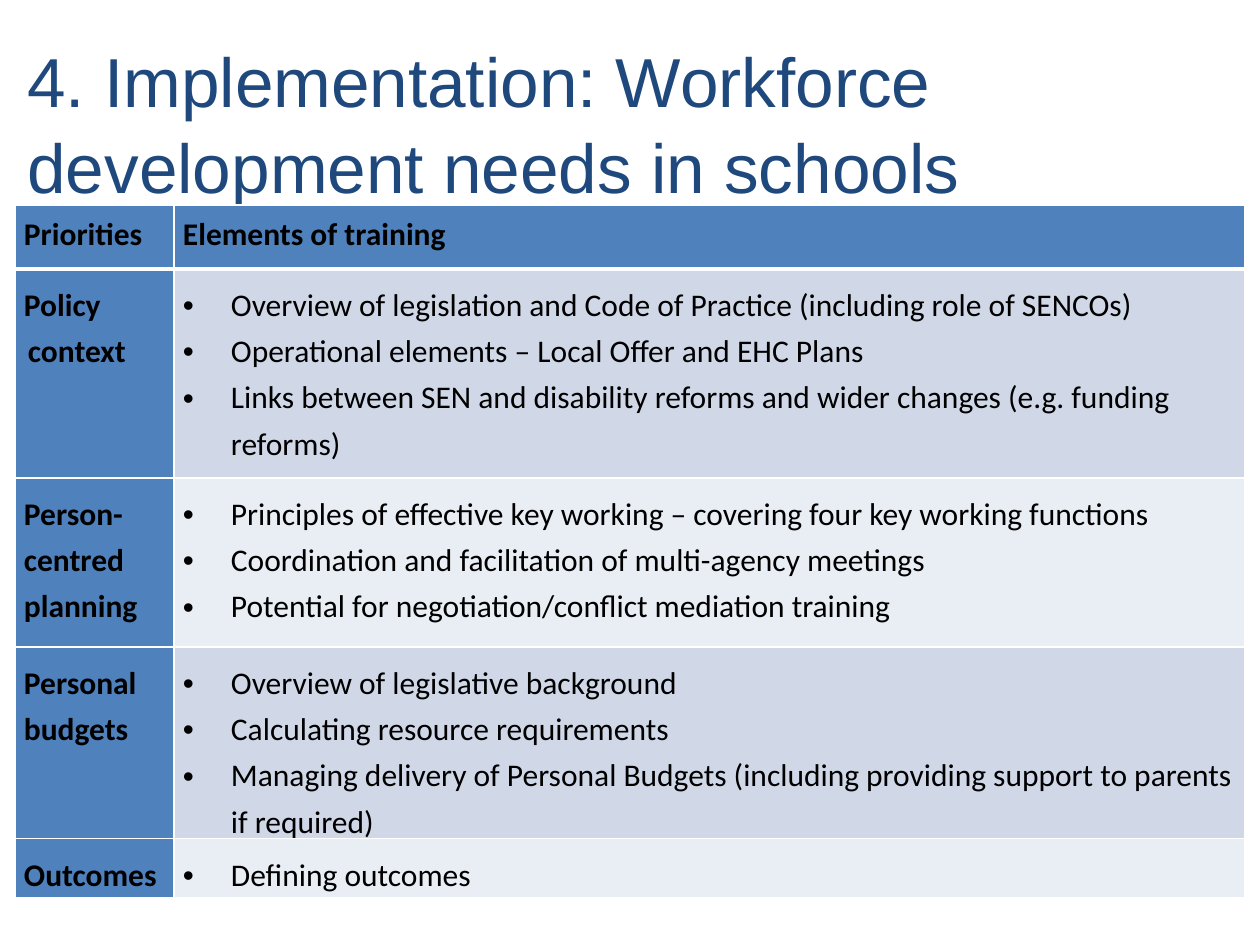
from lxml import etree
from pptx import Presentation
from pptx.dml.color import RGBColor
from pptx.enum.text import MSO_ANCHOR
from pptx.oxml.ns import qn
from pptx.util import Pt

MIDDLE = MSO_ANCHOR.MIDDLE
NAVY = RGBColor(0x1F, 0x49, 0x7D)
BLUE = RGBColor(0x4F, 0x81, 0xBD)
BAND_DARK = RGBColor(0xD0, 0xD8, 0xE8)
BAND_LIGHT = RGBColor(0xE9, 0xED, 0xF4)
BLACK = RGBColor(0, 0, 0)

HEADER = ("Priorities", ["Elements of training"])
PRIORITIES = [
    ("Policy context", [
        "Overview of legislation and Code of Practice (including role of SENCOs)",
        "Operational elements – Local Offer and EHC Plans",
        "Links between SEN and disability reforms and wider changes (e.g. funding reforms)",
    ]),
    ("Person-centred planning", [
        "Principles of effective key working – covering four key working functions",
        "Coordination and facilitation of multi-agency meetings",
        "Potential for negotiation/conflict mediation training",
    ]),
    ("Personal budgets", [
        "Overview of legislative background",
        "Calculating resource requirements",
        "Managing delivery of Personal Budgets (including providing support to parents if required)",
    ]),
    ("Outcomes", ["Defining outcomes"]),
]
COL_WIDTHS = [159, 1071]
ROW_HEIGHTS = [64, 209, 169, 169, 59]


def px(n):
    """Slide pixels (126 to the inch) as EMU."""
    return round(n * 914400 / 126)


def set_borders(cell, bottom):
    """White borders, 1 pt except for the bottom one."""
    tc_pr = cell._tc.get_or_add_tcPr()
    for i, (side, width) in enumerate((("L", 1), ("R", 1), ("T", 1), ("B", bottom))):
        ln = etree.Element(qn(f"a:ln{side}"), w=str(Pt(width)))
        fill = etree.SubElement(ln, qn("a:solidFill"))
        etree.SubElement(fill, qn("a:srgbClr"), val="FFFFFF")
        tc_pr.insert(i, ln)


prs = Presentation()
prs.slide_width, prs.slide_height = px(1260), px(945)
s = prs.slides.add_slide(prs.slide_layouts[6])

# Title
tf = s.shapes.add_textbox(px(15), px(42), px(1230), px(158)).text_frame
tf.word_wrap = True
tf.vertical_anchor = MIDDLE
p = tf.paragraphs[0]
p.text = "4. Implementation: Workforce development needs in schools"
p.line_spacing = 1.04
p.font.name, p.font.size, p.font.color.rgb = "Arial", Pt(39.6), NAVY

# Table grid
rows = [HEADER] + PRIORITIES
table = s.shapes.add_table(len(rows), 2, px(15), px(205),
                           px(sum(COL_WIDTHS)), px(sum(ROW_HEIGHTS))).table
for column, width in zip(table.columns, COL_WIDTHS):
    column.width = px(width)
for row, height in zip(table.rows, ROW_HEIGHTS):
    row.height = px(height)

# Table cells
for i, (priority, elements) in enumerate(rows):
    for j, lines in enumerate(([priority], elements)):
        cell = table.cell(i, j)
        is_body = i > 0 and j > 0
        cell.margin_left = cell.margin_right = px(9)
        cell.margin_top, cell.margin_bottom = px(10), 0
        cell.fill.solid()
        band = BAND_DARK if i % 2 else BAND_LIGHT
        cell.fill.fore_color.rgb = band if is_body else BLUE
        set_borders(cell, 1 if i else 3)

        tf = cell.text_frame
        for k, line in enumerate(lines):
            p = tf.add_paragraph() if k else tf.paragraphs[0]
            p.text = line
            p.font.name, p.font.size = "Calibri", Pt(18)
            p.font.bold, p.font.color.rgb = not is_body, BLACK
            if i:
                p.line_spacing = 1.2
            if is_body:
                p_pr = p._p.get_or_add_pPr()
                p_pr.set("marL", str(px(48)))
                p_pr.set("indent", str(-px(48)))
                bullet_font = etree.Element(qn("a:buFont"), typeface="Arial")
                bullet = etree.Element(qn("a:buChar"), char="•")
                p_pr.find(qn("a:lnSpc")).addnext(bullet_font)
                bullet_font.addnext(bullet)

# The first priority hangs slightly
p_pr = table.cell(1, 0).text_frame.paragraphs[0]._p.get_or_add_pPr()
p_pr.set("marL", str(px(4)))
p_pr.set("indent", str(-px(8)))

prs.save("out.pptx")
